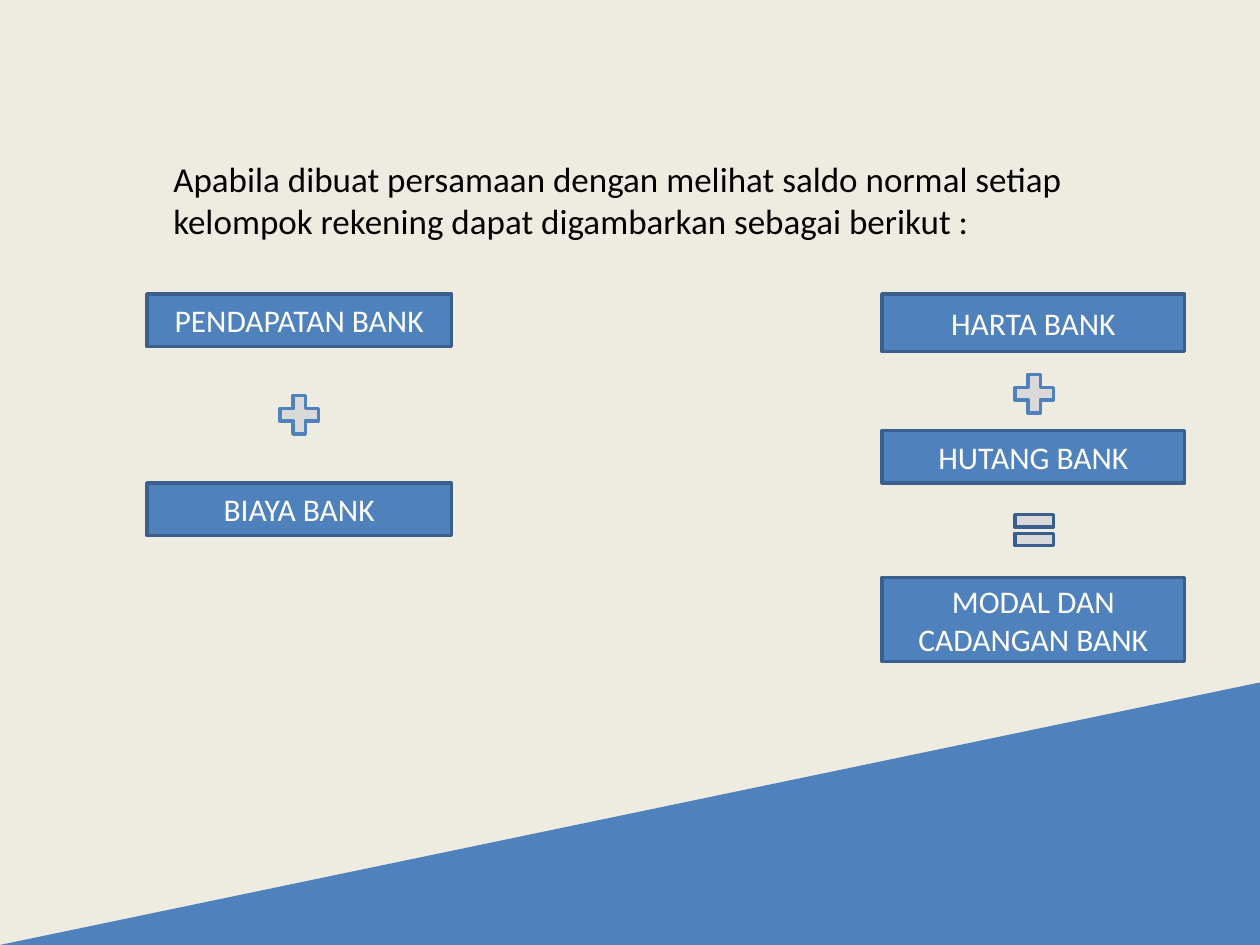
from lxml.etree import SubElement
from pptx import Presentation
from pptx.dml.color import RGBColor
from pptx.enum.shapes import MSO_SHAPE as Shape
from pptx.enum.text import MSO_ANCHOR as Anchor, PP_ALIGN as Align
from pptx.oxml.ns import qn
from pptx.util import Pt

COLORS = {
    "background": "EEECE1",
    "blue": "4F81BD",
    "outline": "3A5F8C",
    "gray": "D9D9D9",
    "black": "000000",
    "white": "FFFFFF",
}


def color(name):
    return RGBColor.from_string(COLORS[name])


def add_figure(kind, left, top, width, height, fill, line=None):
    """Add a flat preset shape, with a 2 pt outline if a line colour is named."""
    figure = slide.shapes.add_shape(kind, Pt(left), Pt(top), Pt(width), Pt(height))
    figure.shadow.inherit = False
    figure.fill.solid()
    figure.fill.fore_color.rgb = color(fill)
    if line:
        figure.line.color.rgb = color(line)
        figure.line.width = Pt(2)
    else:
        figure.line.fill.background()
    return figure


prs = Presentation()
prs.slide_width, prs.slide_height = Pt(720), Pt(540)
slide = prs.slides.add_slide(prs.slide_layouts[1])
slide.background.fill.solid()
slide.background.fill.fore_color.rgb = color("background")

# Introduction
heading = slide.shapes.title
heading.element.getparent().remove(heading.element)
intro = slide.placeholders[1]
intro.left, intro.top, intro.width, intro.height = Pt(64.8), Pt(86.4), Pt(612), Pt(459.4)
sentence = intro.text_frame.paragraphs[0]
properties = sentence._p.get_or_add_pPr()
properties.set("marL", str(Pt(27)))
properties.set("indent", "0")
SubElement(properties, qn("a:buNone"))
sentence.space_before = Pt(0)
run = sentence.add_run()
run.text = (
    "Apabila dibuat persamaan dengan melihat saldo normal setiap "
    "kelompok rekening dapat digambarkan sebagai berikut :"
)
run.font.name = "Calibri"
run.font.size = Pt(20)
run.font.color.rgb = color("black")

# Account groups: income and costs on the left, balance sheet on the right
LEFT_COLUMN, RIGHT_COLUMN = (84, 174), (504, 173)
accounts = [
    ("PENDAPATAN BANK", LEFT_COLUMN, 168, 30),
    ("BIAYA BANK", LEFT_COLUMN, 276, 30),
    ("HARTA BANK", RIGHT_COLUMN, 168, 33),
    ("HUTANG BANK", RIGHT_COLUMN, 246, 30),
    ("MODAL DAN CADANGAN BANK", RIGHT_COLUMN, 330, 48),
]
for name, (left, width), top, height in accounts:
    account = add_figure(Shape.RECTANGLE, left, top, width, height, "blue", "outline")
    frame = account.text_frame
    frame.word_wrap = True
    frame.vertical_anchor = Anchor.MIDDLE
    label = frame.paragraphs[0]
    label.alignment = Align.CENTER
    run = label.add_run()
    run.text = name
    run.font.name = "Calibri"
    run.font.size = Pt(18)
    run.font.color.rgb = color("white")

# Slope along the bottom, rising to the right
slope = add_figure(Shape.RIGHT_TRIANGLE, 0, 390, 720, 150, "blue")
slope.element.spPr.find(qn("a:xfrm")).set("flipH", "1")

# Signs between the accounts
SIGN_SIZE = 30
signs = [
    (Shape.MATH_EQUAL, 576, 288, "outline"),
    (Shape.MATH_PLUS, 156, 222, "blue"),
    (Shape.MATH_PLUS, 576, 210, "blue"),
]
for kind, left, top, line in signs:
    add_figure(kind, left, top, SIGN_SIZE, SIGN_SIZE, "gray", line)

prs.save("out.pptx")
